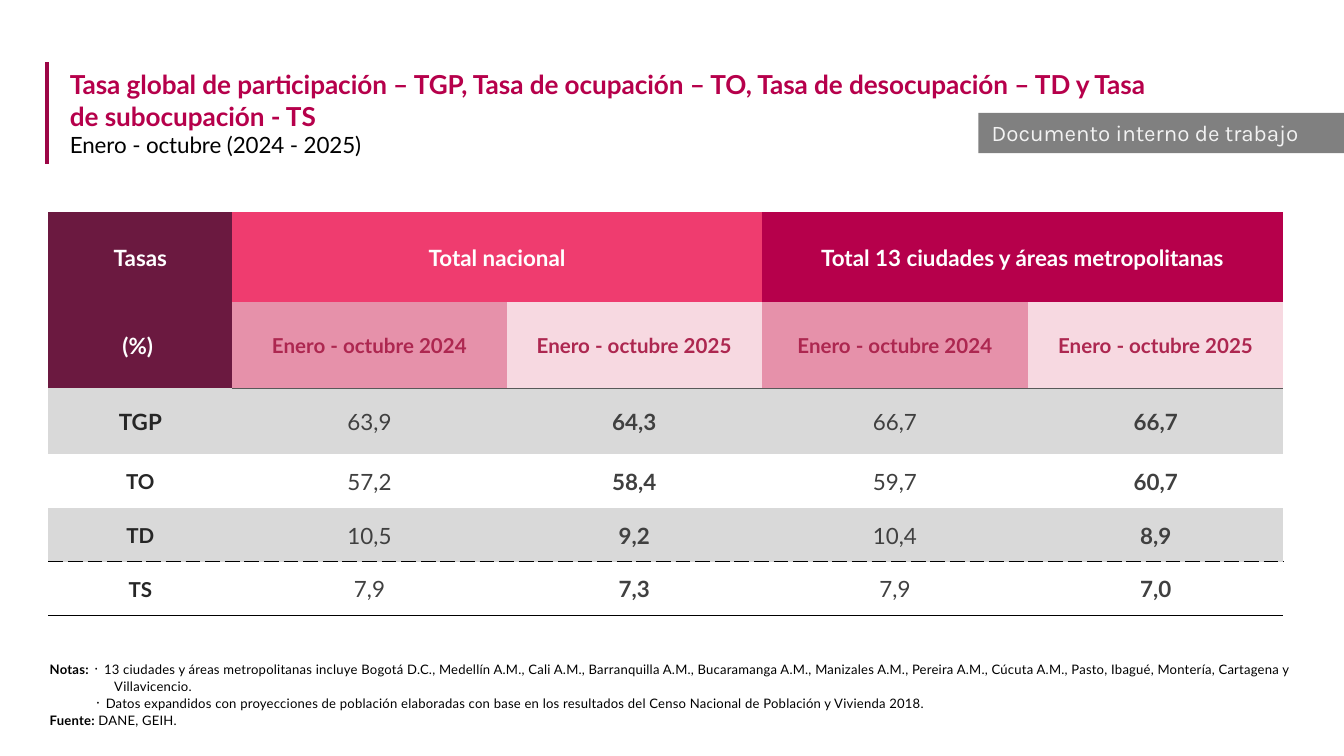
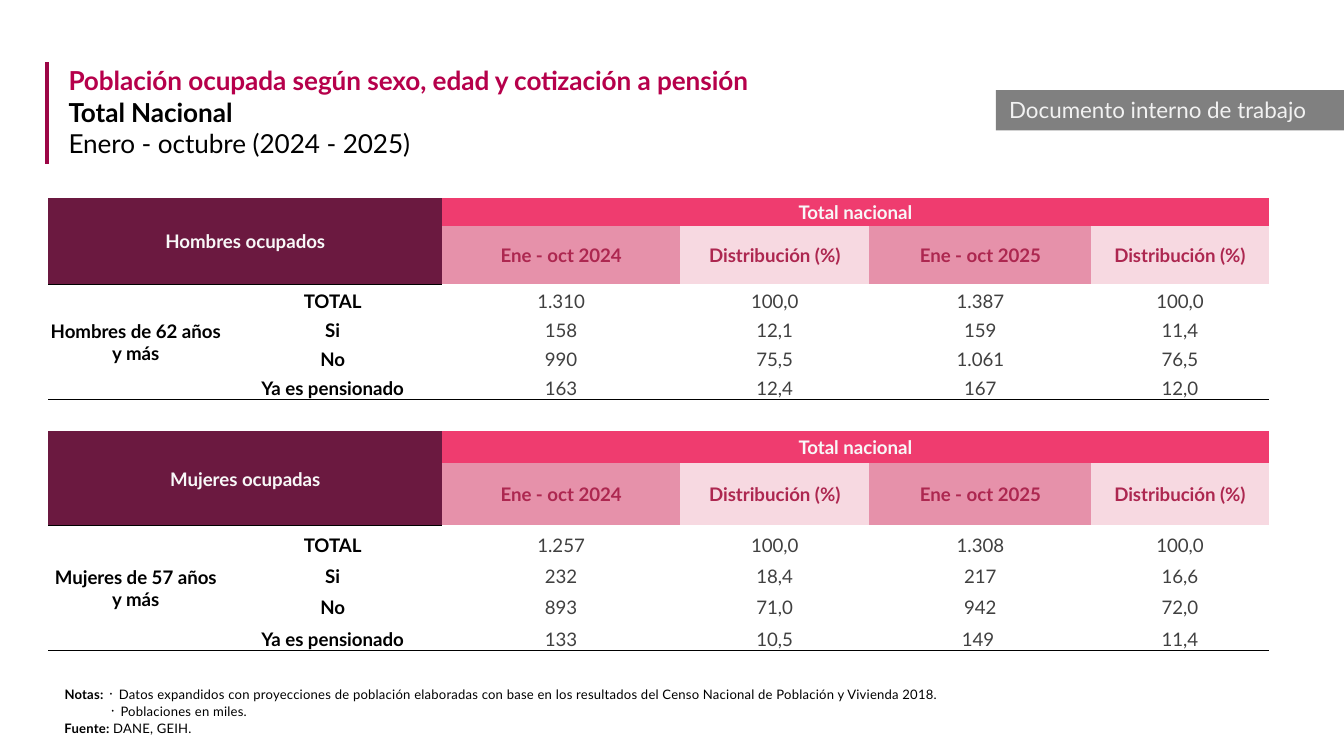
from lxml.etree import SubElement
from pptx import Presentation
from pptx.dml.color import RGBColor
from pptx.enum.shapes import MSO_CONNECTOR, MSO_SHAPE
from pptx.enum.text import MSO_ANCHOR, MSO_AUTO_SIZE, PP_ALIGN
from pptx.oxml.ns import qn
from pptx.util import Inches, Pt

COLORS = {
    "title": "B6004B", "black": "000000", "white": "FFFFFF", "plum": "6B1940",
    "pink": "EF3C6F", "rose": "E691AA", "blush": "F7D9E1", "berry": "AD2750",
    "band": "D9D9D9", "rule": "595959", "label": "262626", "value": "404040",
    "tag": "808080", "tag_text": "F2F2F2", "bar": "9C0646", "head_text": "F8F8F8",
}
NO_GRID_STYLE = "{2D5ABB26-0587-4C30-8999-92F81FD0307C}"
CENSUS_NOTE = ("᛫ Datos expandidos con proyecciones de población elaboradas con base "
               "en los resultados del Censo Nacional de Población y Vivienda 2018.")
PERIOD = "Enero - octubre (2024 - 2025)"


def color(name):
    return RGBColor.from_string(COLORS[name])


def write_text(paragraph, text, size=12, fill="black", bold=False, font="Lato", spacing=0):
    run = paragraph.add_run()
    run.text = text
    run.font.size = Pt(size)
    run.font.name = font
    run.font.bold = bold
    run.font.color.rgb = color(fill)
    if spacing:
        run._r.get_or_add_rPr().set("spc", str(spacing))


def add_border(cell, side, border):
    line = SubElement(cell._tc.get_or_add_tcPr(), qn(f"a:ln{side}"), w=str(Pt(0.5)))
    if border is None:
        SubElement(line, qn("a:noFill"))
        return
    fill, dash = border
    solid = SubElement(line, qn("a:solidFill"))
    SubElement(solid, qn("a:srgbClr"), val=COLORS[fill])
    SubElement(line, qn("a:prstDash"), val=dash)


class Deck:
    def __init__(self):
        self.presentation = Presentation()
        self.presentation.slide_width = Inches(10)
        self.presentation.slide_height = Inches(10) * 9 // 16
        self.slide = None
        self.borders = {}

    def new_slide(self):
        self.slide = self.presentation.slides.add_slide(self.presentation.slide_layouts[6])

    def text_box(self, box, insets, anchor):
        frame = self.slide.shapes.add_textbox(*map(Inches, box)).text_frame
        frame.word_wrap = True
        frame.auto_size = MSO_AUTO_SIZE.SHAPE_TO_FIT_TEXT
        frame.vertical_anchor = anchor
        (frame.margin_left, frame.margin_top,
         frame.margin_right, frame.margin_bottom) = map(Inches, insets)
        return frame

    def title(self, box, lines):
        frame = self.text_box(box, (0.07, 0.04, 0.07, 0.04), MSO_ANCHOR.TOP)
        for index, (text, style) in enumerate(lines):
            paragraph = frame.add_paragraph() if index else frame.paragraphs[0]
            write_text(paragraph, text, spacing=-5, **style)

    def title_bar(self):
        bar = self.slide.shapes.add_connector(
            MSO_CONNECTOR.STRAIGHT, *map(Inches, (0.35, 1.22, 0.35, 0.46)))
        bar.line.color.rgb = color("bar")
        bar.line.width = Pt(2)
        SubElement(bar._element.spPr, qn("a:effectLst"))

    def notes(self, box, first, second):
        frame = self.text_box(box, (0, 0.01, 0, 0), MSO_ANCHOR.BOTTOM)
        lines = [("Notas: ", first, 0.49, -0.48), ("", second, 0.34, 0),
                 ("Fuente: ", "DANE, GEIH.", 0.01, 0)]
        for index, (label, text, margin, indent) in enumerate(lines):
            paragraph = frame.add_paragraph() if index else frame.paragraphs[0]
            properties = paragraph._p.get_or_add_pPr()
            properties.set("marL", str(Inches(margin)))
            properties.set("indent", str(Inches(indent)))
            paragraph.line_spacing = 1.04
            if index:
                paragraph.space_before = Pt(0.6)
            if label:
                write_text(paragraph, label, size=7, bold=True, spacing=13)
            write_text(paragraph, text, size=7, spacing=13)

    def tag(self, left, top, font):
        shape = self.slide.shapes.add_shape(
            MSO_SHAPE.RECTANGLE, *map(Inches, (left, top, 2.72, 0.3)))
        shape.shadow.inherit = False
        shape.fill.solid()
        shape.fill.fore_color.rgb = color("tag")
        shape.line.fill.background()
        frame = shape.text_frame
        frame.vertical_anchor = MSO_ANCHOR.TOP
        paragraph = frame.paragraphs[0]
        paragraph.alignment = PP_ALIGN.LEFT
        write_text(paragraph, "Documento interno de trabajo", fill="tag_text", font=font)

    def table(self, top, columns, rows, rules):
        box = map(Inches, (0.36, top, sum(columns), sum(rows)))
        table = self.slide.shapes.add_table(len(rows), len(columns), *box).table
        table.first_row = table.horz_banding = False
        table._tbl.tblPr.find(qn("a:tableStyleId")).text = NO_GRID_STYLE
        for column, width in zip(table.columns, columns):
            column.width = Inches(width)
        for row, height in zip(table.rows, rows):
            row.height = Inches(height)
        self.borders = {(row, column): (fill, dash)
                        for row, used_columns, fill, dash in rules
                        for column in used_columns}
        return table

    def cell(self, table, row, column, text, background, span=(1, 1),
             anchor=MSO_ANCHOR.MIDDLE, **style):
        cell = table.cell(row, column)
        last_row = row + span[0] - 1
        if span != (1, 1):
            cell.merge(table.cell(last_row, column + span[1] - 1))
        add_border(cell, "L", None)
        add_border(cell, "R", None)
        add_border(cell, "T", self.borders.get((row - 1, column)))
        add_border(cell, "B", self.borders.get((last_row, column)))
        cell.fill.solid()
        cell.fill.fore_color.rgb = color(background)
        cell.vertical_anchor = anchor
        cell.margin_left = cell.margin_top = cell.margin_right = Inches(0.01)
        cell.margin_bottom = 0
        paragraph = cell.text_frame.paragraphs[0]
        paragraph.alignment = PP_ALIGN.CENTER
        write_text(paragraph, text, **style)

    def rates_table(self, rates):
        rules = [(1, range(1, 5), "rule", "solid"), (4, range(5), "black", "dash"),
                 (5, range(5), "black", "solid")]
        table = self.table(1.58, [1.37, 2.04, 1.9, 1.98, 1.9],
                           [0.67, 0.64, 0.49, 0.4, 0.4, 0.4], rules)
        head = {"fill": "white", "bold": True}
        self.cell(table, 0, 0, "Tasas", "plum", **head)
        self.cell(table, 1, 0, "(%) ", "plum", **head)
        self.cell(table, 0, 1, "Total nacional", "pink", (1, 2), **head)
        self.cell(table, 0, 3, "Total 13 ciudades y áreas metropolitanas", "title", (1, 2), **head)
        for column in range(1, 5):
            year, background = (2024, "rose") if column % 2 else (2025, "blush")
            self.cell(table, 1, column, f"Enero - octubre {year}", background,
                      size=11, fill="berry", bold=True)
        for row, (name, *values) in enumerate(rates, 2):
            background = "white" if row % 2 else "band"
            self.cell(table, row, 0, name, background,
                      size=12 if row == 2 else 11, fill="label", bold=True)
            for column, value in enumerate(values, 1):
                self.cell(table, row, column, value, background,
                          fill="value", bold=column % 2 == 0)

    def pension_table(self, top, height, heading, group, answers):
        rules = [(1, range(2), "black", "solid"), (5, range(6), "black", "solid")]
        unit = height / 7
        table = self.table(top, [1.3, 1.63, 1.77, 1.41, 1.65, 1.32],
                           [unit, 2 * unit] + [unit] * 4, rules)
        head = {"size": 10, "fill": "head_text", "bold": True}
        self.cell(table, 0, 0, heading, "plum", (2, 2), **head)
        self.cell(table, 0, 2, "Total nacional", "pink", (1, 4), **head)
        labels = ["Ene - oct 2024", "Distribución (%)", "Ene - oct 2025", "Distribución (%)"]
        for column, label in enumerate(labels, 2):
            self.cell(table, 1, column, label, "blush" if column % 2 else "rose",
                      size=10, fill="berry", bold=True)
        self.cell(table, 2, 0, group, "white", (4, 1), size=10, bold=True)
        names = ["TOTAL", "Si", "No", "Ya es pensionado"]
        for row, (name, values) in enumerate(zip(names, answers), 2):
            self.cell(table, row, 1, name, "white", anchor=MSO_ANCHOR.BOTTOM, size=10, bold=True)
            for column, value in enumerate(values, 2):
                self.cell(table, row, column, value, "white", anchor=MSO_ANCHOR.BOTTOM,
                          size=10, fill="value")


def build_rates_slide(deck):
    deck.new_slide()
    deck.notes((0.36, 4.89, 9.29, 0.53),
               "᛫ 13 ciudades y áreas metropolitanas incluye Bogotá D.C., Medellín A.M., "
               "Cali A.M., Barranquilla A.M., Bucaramanga A.M., Manizales A.M., Pereira A.M., "
               "Cúcuta A.M., Pasto, Ibagué, Montería, Cartagena y Villavicencio.",
               CENSUS_NOTE)
    deck.title((0.45, 0.47, 8.31, 0.75), [
        ("Tasa global de participación – TGP, Tasa de ocupación – TO, "
         "Tasa de desocupación – TD y Tasa de subocupación - TS",
         {"size": 14, "fill": "title", "bold": True}),
        (PERIOD, {"size": 12}),
    ])
    deck.rates_table([
        ("TGP", "63,9", "64,3", "66,7", "66,7"),
        ("TO", "57,2", "58,4", "59,7", "60,7"),
        ("TD", "10,5", "9,2", "10,4", "8,9"),
        ("TS", "7,9", "7,3", "7,9", "7,0"),
    ])
    deck.tag(7.28, 0.84, "Karla")
    deck.title_bar()


def build_pension_slide(deck):
    deck.new_slide()
    deck.title((0.44, 0.44, 9.56, 0.78), [
        ("Población ocupada según sexo, edad y cotización a pensión",
         {"size": 14, "fill": "title", "bold": True}),
        ("Total Nacional", {"size": 14, "bold": True}),
        (PERIOD, {"size": 14}),
    ])
    deck.notes((0.47, 5.09, 9.24, 0.39), CENSUS_NOTE, "᛫ Poblaciones en miles.")
    deck.tag(7.41, 0.67, "Lato")
    deck.pension_table(1.47, 1.5, "Hombres ocupados", "Hombres de 62 años y más", [
        ("1.310", "100,0", "1.387", "100,0"),
        ("158", "12,1", "159", "11,4"),
        ("990", "75,5", "1.061", "76,5"),
        ("163", "12,4", "167", "12,0"),
    ])
    deck.pension_table(3.21, 1.63, "Mujeres ocupadas", "Mujeres de 57 años y más", [
        ("1.257", "100,0", "1.308", "100,0"),
        ("232", "18,4", "217", "16,6"),
        ("893", "71,0", "942", "72,0"),
        ("133", "10,5", "149 ", "11,4"),
    ])
    deck.title_bar()


def main():
    deck = Deck()
    build_rates_slide(deck)
    build_pension_slide(deck)
    deck.presentation.save("out.pptx")


if __name__ == "__main__":
    main()
